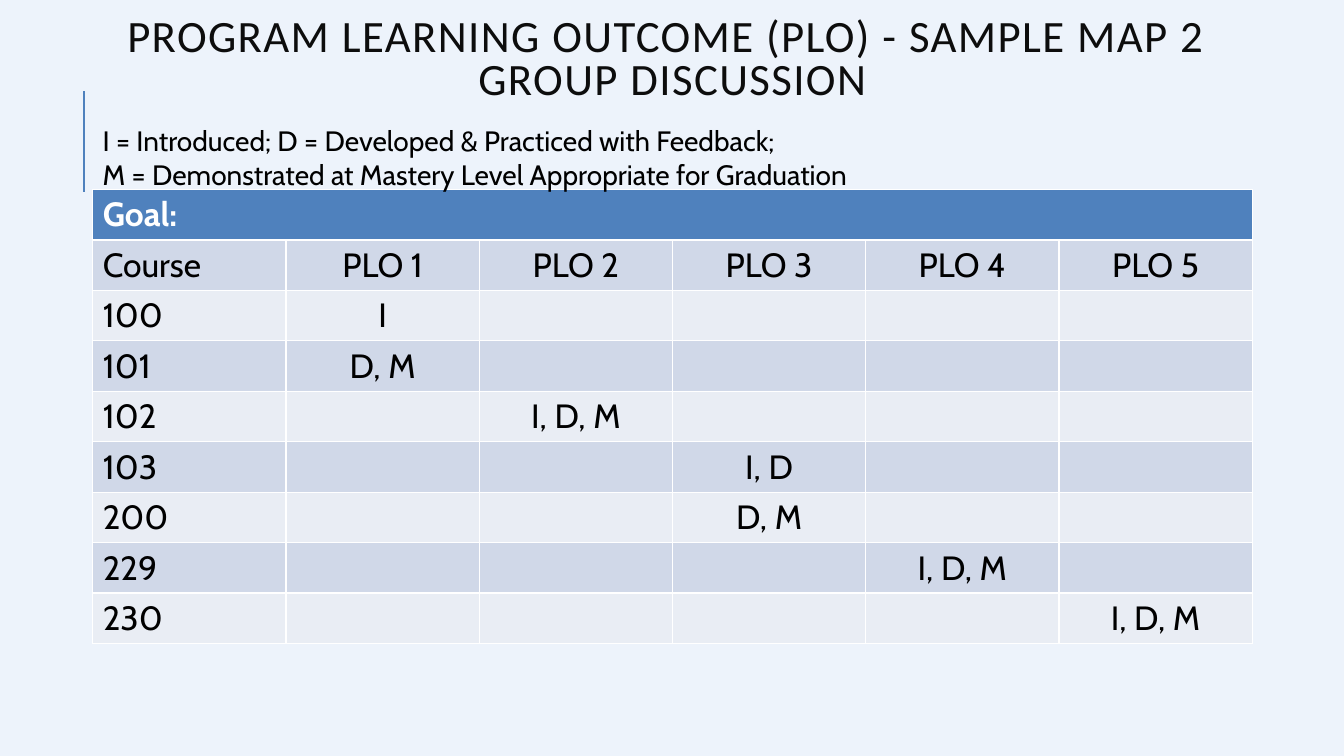
from pptx import Presentation
from pptx.dml.color import RGBColor
from pptx.enum.shapes import MSO_CONNECTOR as Link
from pptx.enum.text import MSO_ANCHOR as Anchor, PP_ALIGN as Align
from pptx.util import Inches, Pt
from lxml.etree import SubElement
from pptx.oxml.ns import qn

PALE = RGBColor(0xED, 0xF3, 0xFB)
BLUE = RGBColor(0x4F, 0x81, 0xBD)
BAND = RGBColor(0xD0, 0xD8, 0xE8)
LIGHT = RGBColor(0xE9, 0xED, 0xF4)
INK = RGBColor(0x0D, 0x0D, 0x0D)
BLACK = RGBColor(0, 0, 0)
WHITE = RGBColor(0xFF, 0xFF, 0xFF)

LEFT, WIDTH = 0.92, 11.5
PLOS = 5
COURSES = [  # course, PLO number, levels
    ("100", 1, "I"),
    ("101", 1, "D, M"),
    ("102", 2, "I, D, M"),
    ("103", 3, "I, D"),
    ("200", 3, "D, M"),
    ("229", 4, "I, D, M"),
    ("230", 5, "I, D, M"),
]


class Deck:
    font = "Cabin"

    def __init__(self):
        self.prs = Presentation()
        self.prs.slide_width = Inches(13.33)
        self.prs.slide_height = Inches(7.5)
        self.slide = self.prs.slides.add_slide(self.prs.slide_layouts[6])
        fill = self.slide.background.fill
        fill.solid()
        fill.fore_color.rgb = PALE

    def style(self, para, size, color=BLACK, bold=False, name=None, align=Align.LEFT):
        para.alignment = align
        font = para.font
        font.name = name or self.font
        font.size = Pt(size)
        font.bold = bold
        font.color.rgb = color

    def line(self, x1, y1, x2, y2, color, width):
        rule = self.slide.shapes.add_connector(
            Link.STRAIGHT, Inches(x1), Inches(y1), Inches(x2), Inches(y2))
        rule.line.color.rgb = color
        rule.line.width = Pt(width)
        SubElement(rule._element.spPr, qn("a:effectLst"))

    def text(self, words, top, height, size, anchor=Anchor.TOP, **look):
        box = self.slide.shapes.add_textbox(
            Inches(LEFT), Inches(top), Inches(WIDTH), Inches(height))
        frame = box.text_frame
        frame.word_wrap = True
        frame.vertical_anchor = anchor
        para = frame.paragraphs[0]
        para.text = words
        self.style(para, size, **look)
        return para

    def title(self, words):
        para = self.text(words, 0.03, 1.15, 32, Anchor.MIDDLE,
                         color=INK, name="Calibri", align=Align.CENTER)
        para.line_spacing = 0.8
        for run in para.runs:
            run._r.get_or_add_rPr().set("spc", "100")

    def cell(self, cell, words, fill, **look):
        cell.fill.solid()
        cell.fill.fore_color.rgb = fill
        cell.text = words
        self.style(cell.text_frame.paragraphs[0], 24, **look)

    def table(self, rows, top, height):
        """Draw a merged heading row above banded rows."""
        grid = self.slide.shapes.add_table(
            len(rows) + 1, len(rows[0]), Inches(LEFT), Inches(top),
            Inches(WIDTH), Inches(height)).table
        head = grid.cell(0, 0)
        head.merge(grid.cell(0, len(rows[0]) - 1))
        self.cell(head, "Goal:", BLUE, color=WHITE, bold=True)
        for r, row in enumerate(rows, 1):
            for c, words in enumerate(row):
                self.cell(grid.cell(r, c), words, BAND if r % 2 else LIGHT,
                          align=Align.CENTER if c else Align.LEFT)


def main():
    deck = Deck()
    deck.line(0.83, 1.9, 0.83, 0.9, BLUE, 1.5)
    deck.title("PROGRAM LEARNING OUTCOME (PLO) - SAMPLE MAP 2 \vGROUP DISCUSSION")
    nums = range(1, PLOS + 1)
    rows = [["Course"] + [f"PLO {n}" for n in nums]]
    for course, plo, levels in COURSES:
        rows.append([course] + [levels if n == plo else "" for n in nums])
    deck.table(rows, 1.88, 4.5)
    deck.text("I = Introduced; D = Developed & Practiced with Feedback; \v"
              "M = Demonstrated at Mastery Level Appropriate for Graduation",
              1.18, 0.77, 20)
    deck.prs.save("out.pptx")


if __name__ == "__main__":
    main()
